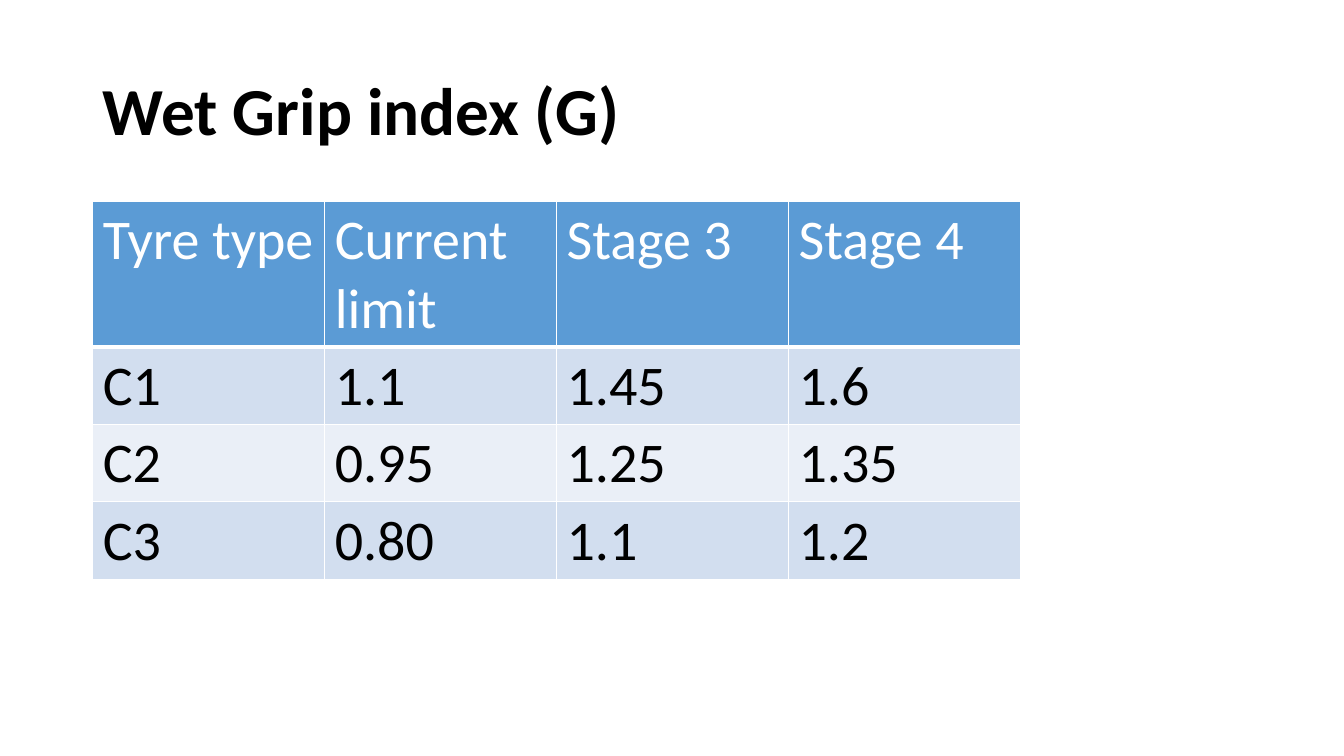
from pptx import Presentation, util as u
from pptx.dml.color import RGBColor
from pptx.enum import text
from pptx.oxml import parse_xml
from pptx.oxml.ns import nsdecls

BLACK = RGBColor(0x00, 0x00, 0x00)
WHITE = RGBColor(0xFF, 0xFF, 0xFF)
HEADER = RGBColor(0x5B, 0x9B, 0xD5)
BAND_DARK = RGBColor(0xD2, 0xDE, 0xEF)
BAND_LIGHT = RGBColor(0xEA, 0xEF, 0xF7)

GRIP_LIMITS = [
    ("Tyre type", "Current limit", "Stage 3", "Stage 4"),
    ("C1", "1.1", "1.45", "1.6"),
    ("C2", "0.95", "1.25", "1.35"),
    ("C3", "0.80", "1.1", "1.2"),
]


class Deck:
    """Hold the text style and the current slide, and add elements to it."""

    def __init__(self, s, font="Calibri"):
        self.s = s
        self.font = font

    def style(self, p, size, color, bold=False):
        p.font.name = self.font
        p.font.size = u.Pt(size)
        p.font.bold = bold
        p.font.color.rgb = color

    def title(self, words, left, top, width, height):
        sp = self.s.shapes.add_textbox(*map(u.Inches, (left, top, width, height)))
        tf = sp.text_frame
        tf.word_wrap = True
        tf.vertical_anchor = text.MSO_ANCHOR.MIDDLE
        p = tf.paragraphs[0]
        p.text = words
        p.line_spacing = 0.9
        self.style(p, 48, BLACK, bold=True)

    def border(self, cell, side, points):
        cell._tc.get_or_add_tcPr().append(parse_xml(
            f'<a:ln{side} {nsdecls("a")} w="{u.Pt(points)}"><a:solidFill>'
            f'<a:srgbClr val="{WHITE}"/></a:solidFill></a:ln{side}>'))

    def table(self, rows, left, top, col_width, row_heights):
        size = col_width * len(rows[0]), sum(row_heights)
        table = self.s.shapes.add_table(
            len(rows), len(rows[0]), *map(u.Inches, (left, top, *size))).table
        for column in table.columns:
            column.width = u.Inches(col_width)
        for i, values in enumerate(rows):
            table.rows[i].height = u.Inches(row_heights[i])
            fill = (BAND_DARK if i % 2 else BAND_LIGHT) if i else HEADER
            for j, value in enumerate(values):
                cell = table.cell(i, j)
                for side in "LRTB":
                    self.border(cell, side, 3 if i == 0 and side == "B" else 1)
                cell.fill.solid()
                cell.fill.fore_color.rgb = fill
                cell.text = value
                self.style(cell.text_frame.paragraphs[0], 40, BLACK if i else WHITE)


def main():
    prs = Presentation()
    prs.slide_width, prs.slide_height = u.Inches(13.33), u.Inches(7.5)
    deck = Deck(prs.slides.add_slide(prs.slide_layouts[6]))
    deck.title("Wet Grip index (G)", 0.92, 0.4, 11.5, 1.45)
    deck.table(GRIP_LIMITS, 0.92, 2, 2.3, [1.44] + [0.77] * 3)
    prs.save("out.pptx")


if __name__ == "__main__":
    main()
